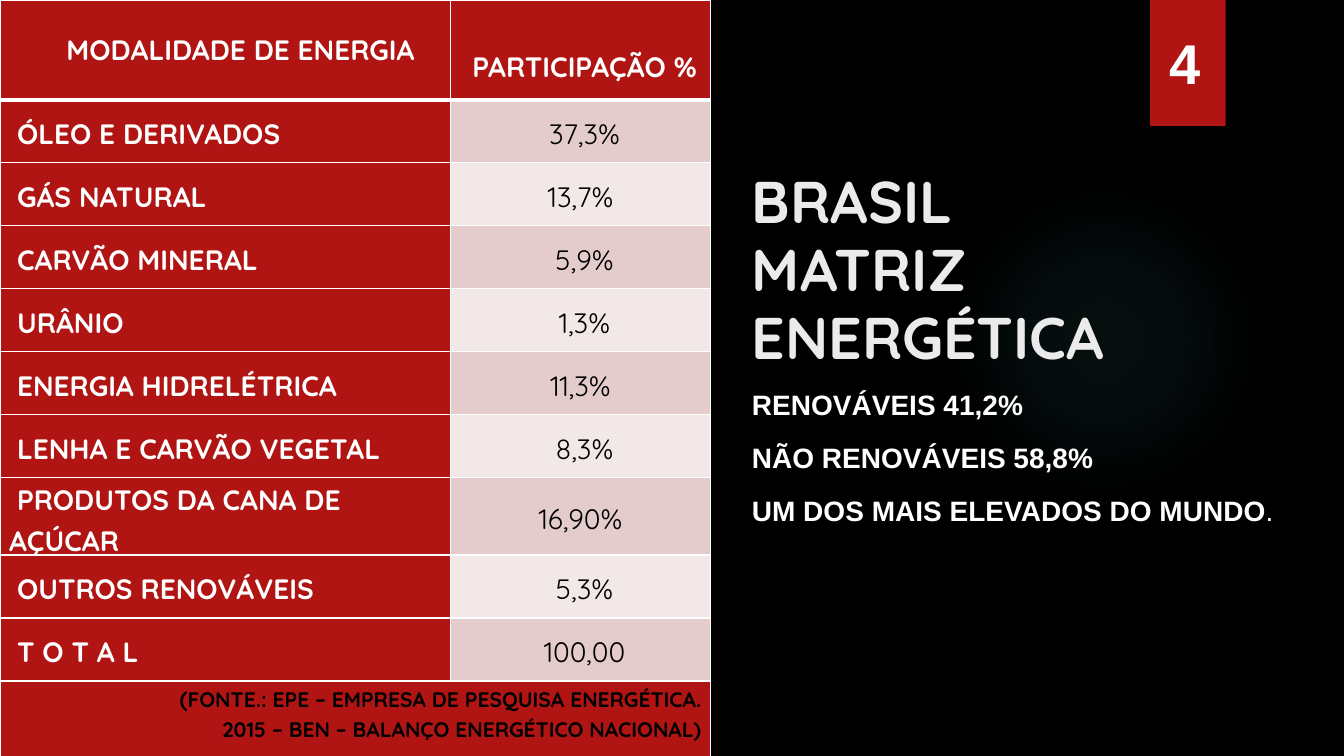
from dataclasses import dataclass

from lxml import etree
from pptx import Presentation, util as u
from pptx.dml.color import RGBColor
from pptx.enum import shapes, text
from pptx.oxml import parse_xml
from pptx.oxml.ns import qn

RED = RGBColor(0xB0, 0x15, 0x13)
WHITE = RGBColor(0xFF, 0xFF, 0xFF)
OFF_WHITE = RGBColor(0xEB, 0xEB, 0xEB)
BLACK = RGBColor(0, 0, 0)
DARK_BAND = RGBColor(0xE4, 0xCC, 0xCC)
LIGHT_BAND = RGBColor(0xF2, 0xE8, 0xE7)
GLOW = RGBColor(0x50, 0xB9, 0xC1)

TITLE_FONT, BODY_FONT = "Quicksand", "Arial"
LEFT, CENTER, RIGHT = text.PP_ALIGN.LEFT, text.PP_ALIGN.CENTER, text.PP_ALIGN.RIGHT
NUDGE = 5.7  # first-line indent of the table text
HEADER_HEIGHT, ROW_HEIGHT, TALL_ROW_HEIGHT, SOURCE_HEIGHT = 71.3, 45, 54.7, 56.9


@dataclass
class EnergyRow:
    name: str
    share: str
    share_indent: float = NUDGE
    height: float = ROW_HEIGHT


ENERGY_ROWS = [
    EnergyRow("ÓLEO E DERIVADOS", "37,3%"),
    EnergyRow("GÁS NATURAL", "13,7%", 0),
    EnergyRow("CARVÃO MINERAL", "5,9%"),
    EnergyRow("URÂNIO", "1,3%"),
    EnergyRow("ENERGIA HIDRELÉTRICA", "11,3%", 0),
    EnergyRow("LENHA E CARVÃO VEGETAL", "8,3%"),
    EnergyRow("PRODUTOS DA CANA DE AÇÚCAR", "16,90%", 0, TALL_ROW_HEIGHT),
    EnergyRow("OUTROS RENOVÁVEIS", "5,3%"),
    EnergyRow("T O T A L", "100,00"),
]


def write(paragraph, wording: str, *, size: float = 20, font: str = TITLE_FONT,
          color: RGBColor = WHITE, bold: bool = True, align=LEFT,
          spacing: float = 1, after: float = 0, indent: float = 0) -> None:
    """Add formatted text to a paragraph; a vertical tab is a line break."""
    paragraph.alignment = align
    paragraph.line_spacing = spacing
    paragraph.space_after = u.Pt(after)
    if indent:
        properties = paragraph._p.get_or_add_pPr()
        properties.set("marL", "0")
        properties.set("indent", str(u.Pt(indent)))
    for number, line in enumerate(wording.split("\v")):
        if number:
            paragraph.add_line_break()
        run = paragraph.add_run()
        run.text = line
        run.font.size = u.Pt(size)
        run.font.name = font
        run.font.bold = bold
        run.font.color.rgb = color


def add_text_box(slide, left: float, top: float, width: float, height: float):
    frame = slide.shapes.add_textbox(
        u.Pt(left), u.Pt(top), u.Pt(width), u.Pt(height)).text_frame
    frame.word_wrap = True
    return frame


def add_plain_shape(slide, kind, left: float, top: float, width: float, height: float):
    shape = slide.shapes.add_shape(kind, u.Pt(left), u.Pt(top), u.Pt(width), u.Pt(height))
    shape.shadow.inherit = False
    shape.line.fill.background()
    return shape


def add_glow(slide) -> None:
    shape = add_plain_shape(slide, shapes.MSO_SHAPE.OVAL, 677.5, 131.8, 221.8, 221.8)
    shape.fill.background()
    stops = "".join(
        f'<a:gs pos="{position * 1000}"><a:srgbClr val="{GLOW}">'
        f'<a:alpha val="{alpha * 1000}"/></a:srgbClr></a:gs>'
        for position, alpha in ((0, 7), (36, 6), (69, 0), (100, 0)))
    gradient = parse_xml(
        '<a:gradFill xmlns:a="http://schemas.openxmlformats.org/drawingml/2006/main">'
        f'<a:gsLst>{stops}</a:gsLst><a:path path="circle">'
        '<a:fillToRect l="50000" t="50000" r="50000" b="50000"/></a:path></a:gradFill>')
    properties = shape._element.spPr
    properties.replace(properties.find(qn("a:noFill")), gradient)


def style_cell(cell, fill: RGBColor, *, bottom: float = 1, top: float = 1,
               anchor=text.MSO_ANCHOR.MIDDLE) -> None:
    cell.margin_left = cell.margin_right = u.Pt(6.5)
    cell.margin_top = cell.margin_bottom = u.Pt(0)
    cell.vertical_anchor = anchor
    properties = cell._tc.get_or_add_tcPr()
    for side, width in (("lnL", 1), ("lnR", 1), ("lnT", top), ("lnB", bottom)):
        line = etree.SubElement(properties, qn(f"a:{side}"), w=str(u.Pt(width)))
        solid = etree.SubElement(line, qn("a:solidFill"))
        etree.SubElement(solid, qn("a:srgbClr"), val=str(WHITE))
    cell.fill.solid()
    cell.fill.fore_color.rgb = fill


def add_energy_table(slide) -> None:
    heights = [HEADER_HEIGHT, *(row.height for row in ENERGY_ROWS), SOURCE_HEIGHT]
    widths = [321.8, 185.8]
    table = slide.shapes.add_table(
        len(heights), 2, 0, 0, u.Pt(sum(widths)), u.Pt(sum(heights))).table
    for column, width in zip(table.columns, widths):
        column.width = u.Pt(width)
    for row, height in zip(table.rows, heights):
        row.height = u.Pt(height)

    # Header
    headers = (("MODALIDADE DE ENERGIA", LEFT, 41), ("PARTICIPAÇÃO %", CENTER, NUDGE))
    for column, (wording, align, indent) in enumerate(headers):
        cell = table.cell(0, column)
        style_cell(cell, RED, bottom=3)
        write(cell.text_frame.paragraphs[0], wording, align=align, indent=indent)
    table.cell(0, 1).margin_top = u.Pt(25)

    # Energy sources
    for number, row in enumerate(ENERGY_ROWS, start=1):
        top = 3 if number == 1 else 1
        name, share = table.cell(number, 0), table.cell(number, 1)
        style_cell(name, RED, top=top)
        style_cell(share, DARK_BAND if number % 2 else LIGHT_BAND, top=top)
        write(name.text_frame.paragraphs[0], row.name, spacing=1.15, indent=NUDGE)
        write(share.text_frame.paragraphs[0], row.share, color=BLACK, bold=False,
              align=CENTER, spacing=1.15, indent=row.share_indent)

    # Reference
    last = len(heights) - 1
    cell = table.cell(last, 0)
    cell.merge(table.cell(last, 1))
    for column in range(2):
        style_cell(table.cell(last, column), RED, anchor=text.MSO_ANCHOR.TOP)
    reference = dict(color=BLACK, align=RIGHT, spacing=1.15)
    first = cell.text_frame.paragraphs[0]
    write(first, "(", size=16, **reference)
    write(first, "FONTE.: EPE – EMPRESA DE PESQUISA ENERGÉTICA.", size=15, **reference)
    write(cell.text_frame.add_paragraph(),
          "2015 – BEN – BALANÇO ENERGÉTICO NACIONAL)", size=15, **reference)


def main() -> None:
    presentation = Presentation()
    presentation.slide_width, presentation.slide_height = u.Pt(960), u.Pt(540)
    slide = presentation.slides.add_slide(presentation.slide_layouts[6])
    slide.background.fill.solid()
    slide.background.fill.fore_color.rgb = BLACK

    # Backdrop and number tab
    add_glow(slide)
    tab = add_plain_shape(slide, shapes.MSO_SHAPE.RECTANGLE, 821.5, 0, 54, 90)
    tab.fill.solid()
    tab.fill.fore_color.rgb = RED

    # Title
    title = add_text_box(slide, 530, 117.4, 430, 154.8)
    title.margin_right = u.Pt(30)
    write(title.paragraphs[0], "BRASIL\vMATRIZ ENERGÉTICA", size=42,
          color=OFF_WHITE, spacing=0.96)

    add_energy_table(slide)

    # Renewable shares
    body = add_text_box(slide, 530, 272.2, 404, 106.6)
    statements = ("RENOVÁVEIS 41,2%", "NÃO RENOVÁVEIS 58,8%", "UM DOS MAIS ELEVADOS DO MUNDO")
    body_format = dict(font=BODY_FONT, spacing=1.04, after=12.8)
    for number, statement in enumerate(statements):
        paragraph = body.add_paragraph() if number else body.paragraphs[0]
        write(paragraph, statement, **body_format)
    write(paragraph, ".", bold=False, **body_format)

    # Slide number
    number_box = add_text_box(slide, 828, 16.6, 38.2, 55.4)
    write(number_box.paragraphs[0], "4", size=40, font=BODY_FONT)

    presentation.save("out.pptx")


if __name__ == "__main__":
    main()
